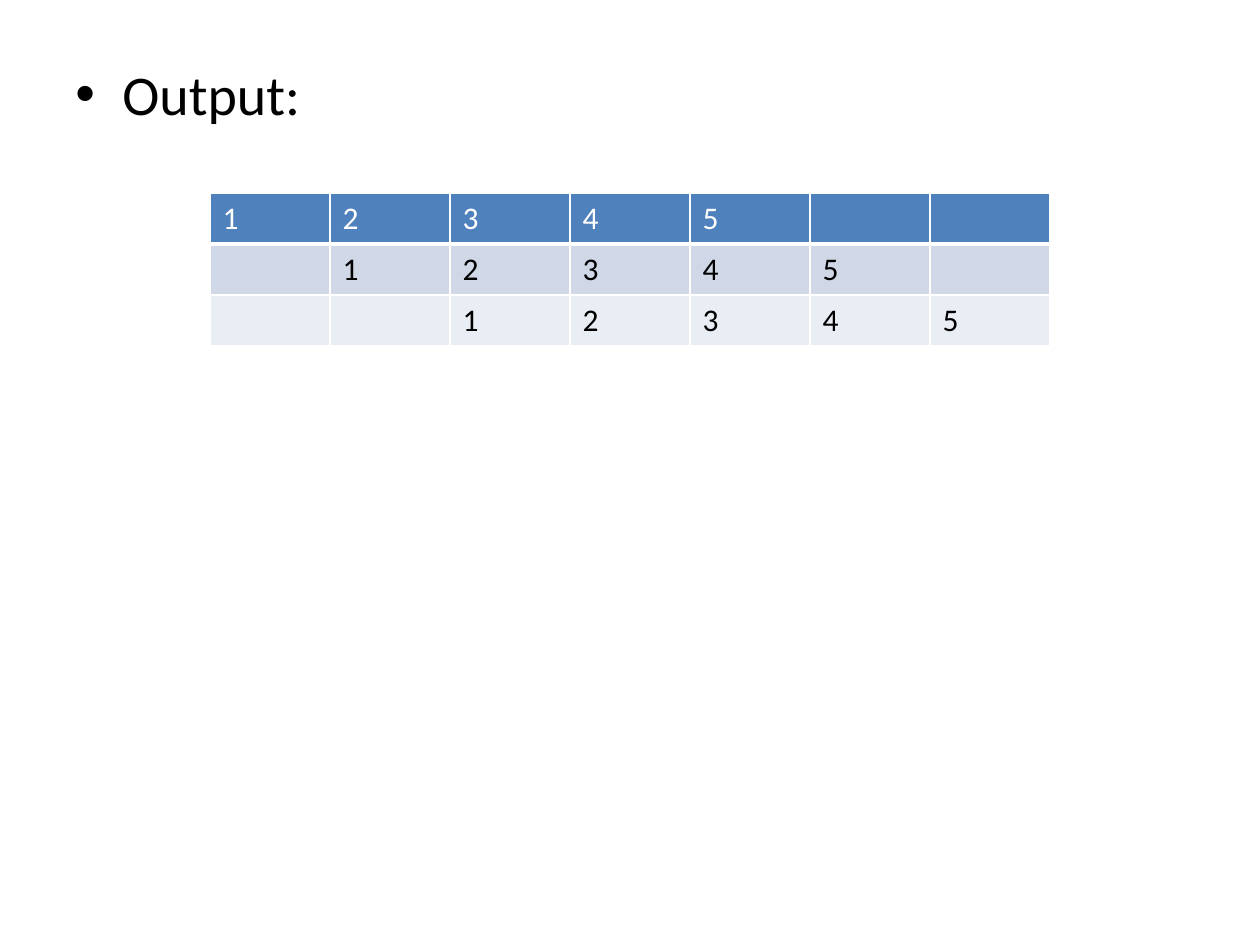
from lxml import etree
from pptx import Presentation, util as u
from pptx.dml.color import RGBColor
from pptx.oxml.ns import qn

SCALE = 914400 / 126
FONT = "Calibri"
WHITE, BLACK = "FFFFFF", "000000"
ROW_FILLS = ["4F81BD", "D0D8E8", "E9EDF4"]
COLUMNS = 7
SEQUENCE = ["1", "2", "3", "4", "5"]


def px(length):
    return u.Emu(round(length * SCALE))


def color(value):
    return RGBColor.from_string(value)


def style_text(para, size, ink):
    for span in para.runs:
        span.font.name = FONT
        span.font.size = u.Pt(size)
        span.font.color.rgb = color(ink)


def add_bullet(para, indent):
    properties = para._p.get_or_add_pPr()
    properties.set("marL", str(px(indent)))
    properties.set("indent", str(-px(indent)))
    etree.SubElement(properties, qn("a:buFont"), typeface="Arial")
    etree.SubElement(properties, qn("a:buChar"), char="•")


def add_body(page, content):
    box = page.shapes.add_textbox(px(63), px(53), px(1134), px(793))
    frame = box.text_frame
    frame.word_wrap = True
    frame.text = content
    para = frame.paragraphs[0]
    para.space_before = u.Pt(6.4)
    add_bullet(para, 47)
    style_text(para, 32, BLACK)


def set_borders(cell, bottom):
    properties = cell._tc.get_or_add_tcPr()
    widths = {"a:lnL": 1, "a:lnR": 1, "a:lnT": 1, "a:lnB": bottom}
    for position, (side, width) in enumerate(widths.items()):
        line = etree.Element(qn(side), w=str(u.Pt(width)))
        fill = etree.SubElement(line, qn("a:solidFill"))
        etree.SubElement(fill, qn("a:srgbClr"), val=WHITE)
        properties.insert(position, line)


def add_shift_table(page):
    column_width, row_height = 120, 51
    table = page.shapes.add_table(
        len(ROW_FILLS), COLUMNS, px(210), px(193),
        px(column_width * COLUMNS), px(row_height * len(ROW_FILLS)),
    ).table
    for row, row_fill in enumerate(ROW_FILLS):
        is_header = row == 0
        for column in range(COLUMNS):
            cell = table.cell(row, column)
            cell.fill.solid()
            cell.fill.fore_color.rgb = color(row_fill)
            set_borders(cell, 3 if is_header else 1)
            if row <= column < row + len(SEQUENCE):
                cell.text = SEQUENCE[column - row]
                para = cell.text_frame.paragraphs[0]
                style_text(para, 18, WHITE if is_header else BLACK)
                para.runs[0].font.bold = False


def main():
    deck = Presentation()
    deck.slide_width, deck.slide_height = px(1260), px(945)
    page = deck.slides.add_slide(deck.slide_layouts[6])
    add_body(page, "Output:")
    add_shift_table(page)
    deck.save("out.pptx")


if __name__ == "__main__":
    main()
